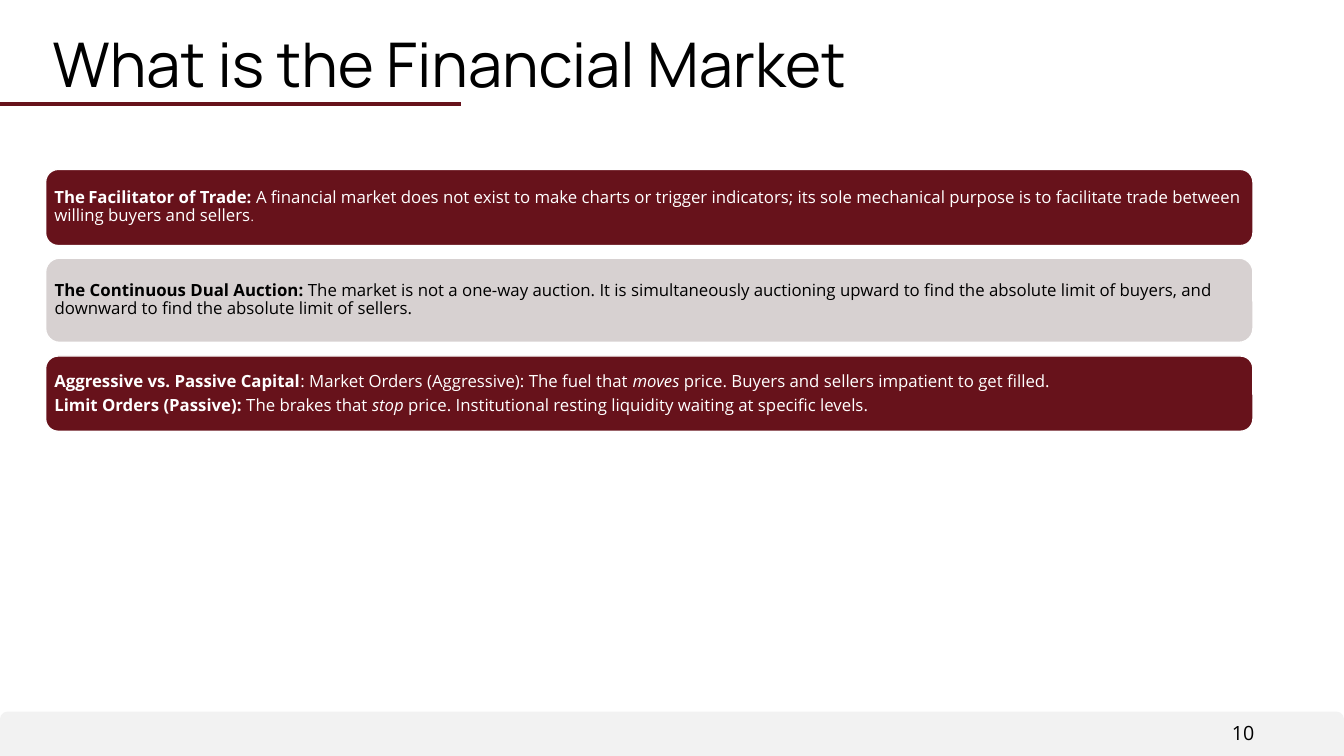
from pptx import Presentation
from pptx.dml.color import RGBColor
from pptx.enum.shapes import MSO_CONNECTOR, MSO_SHAPE
from pptx.enum.text import MSO_ANCHOR, PP_ALIGN
from pptx.oxml.ns import qn
from pptx.util import Pt
from lxml.etree import SubElement

MAROON, GREY, WHITE, BLACK = "67121B", "D7D1D1", "FFFFFF", "000000"
FOOTER_GREY = "F2F2F2"
BODY_FONT, TITLE_FONT = "Open Sans", "Manrope"

# Each card: top, height, fill, text colour, paragraphs of (text, style, size) runs
CARDS = [
    (121, 54.4, MAROON, WHITE, [[
        ("The", "bold", 12), (" ", "bold", 9), ("Facilitator of Trade:", "bold", 12),
        (" A financial market does not exist to make charts or trigger indicators; "
         "its sole mechanical purpose is to facilitate trade between willing buyers "
         "and sellers", "plain", 12),
        (".", "plain", 9)]]),
    (184.4, 60.2, GREY, BLACK, [[
        ("The Continuous Dual Auction:", "bold", 12),
        (" The market is not a one-way auction. It is simultaneously auctioning upward "
         "to find the absolute limit of buyers, and downward to find the absolute limit "
         "of sellers.", "plain", 12)]]),
    (254.3, 53.8, MAROON, WHITE, [
        [("Aggressive vs. Passive Capital", "bold", 12),
         (": Market Orders (Aggressive): The fuel that ", "plain", 12),
         ("moves", "italic", 12),
         (" price. Buyers and sellers impatient to get filled.", "plain", 12)],
        [("Limit Orders (Passive):", "bold", 12), (" The brakes that ", "plain", 12),
         ("stop", "italic", 12),
         (" price. Institutional resting liquidity waiting at specific levels.",
          "plain", 12)]]),
]


def color(hex_string):
    return RGBColor.from_string(hex_string)


def set_font(font, name, size, hex_string):
    font.name, font.size = name, Pt(size)
    font.color.rgb = color(hex_string)


def set_margins(frame, horizontal, vertical):
    frame.margin_left = frame.margin_right = Pt(horizontal)
    frame.margin_top = frame.margin_bottom = Pt(vertical)


def add_filled_shape(slide, kind, box, fill):
    shape = slide.shapes.add_shape(kind, *map(Pt, box))
    shape.shadow.inherit = False
    shape.fill.solid()
    shape.fill.fore_color.rgb = color(fill)
    shape.line.fill.background()
    return shape


def add_text(slide, box, text, font, size, anchor, alignment):
    frame = slide.shapes.add_textbox(*map(Pt, box)).text_frame
    frame.word_wrap = True
    frame.vertical_anchor = anchor
    set_margins(frame, 5, 3)
    paragraph = frame.paragraphs[0]
    paragraph.text = text
    paragraph.alignment = alignment
    set_font(paragraph.runs[0].font, font, size, BLACK)
    return paragraph


def add_footer(slide, left, top, width, height):
    add_filled_shape(slide, MSO_SHAPE.ROUND_2_SAME_RECTANGLE,
                     (left, top, width, height), FOOTER_GREY)
    add_text(slide, (left + 779, top + 3.6, 122, 24.5), "10", BODY_FONT, 14,
             MSO_ANCHOR.TOP, PP_ALIGN.RIGHT)


def add_header(slide, left, top, width, height):
    # Rule from the slide edge, level with the bottom of the title
    rule_top = top + height - 0.7
    rule = slide.shapes.add_connector(MSO_CONNECTOR.STRAIGHT, Pt(0), Pt(rule_top),
                                      Pt(329), Pt(rule_top))
    rule.line.color.rgb = color(MAROON)
    rule.line.width = Pt(3)
    SubElement(rule._element.spPr, qn("a:effectLst"))
    title = add_text(slide, (left, top, width, height), "What is the Financial Market",
                     TITLE_FONT, 44, MSO_ANCHOR.BOTTOM, PP_ALIGN.LEFT)
    title.line_spacing = 0.9


def add_card(slide, left, top, width, height, fill, text_color, paragraphs):
    card = add_filled_shape(slide, MSO_SHAPE.ROUNDED_RECTANGLE,
                            (left, top, width, height), fill)
    card.line.color.rgb = color(WHITE)
    card.line.width = Pt(1)
    frame = card.text_frame
    frame.word_wrap = True
    frame.vertical_anchor = MSO_ANCHOR.MIDDLE
    set_margins(frame, 3.6, 3.6)
    for index, runs in enumerate(paragraphs):
        paragraph = frame.add_paragraph() if index else frame.paragraphs[0]
        paragraph.alignment = PP_ALIGN.LEFT
        paragraph.line_spacing = 0.9
        paragraph.space_after = Pt(4.2)
        for text, style, size in runs:
            run = paragraph.add_run()
            run.text = text
            set_font(run.font, BODY_FONT, size, text_color)
            run.font.bold = style == "bold"
            run.font.italic = style == "italic"


def main():
    presentation = Presentation()
    presentation.slide_width, presentation.slide_height = Pt(960), Pt(540)
    slide = presentation.slides.add_slide(presentation.slide_layouts[6])
    add_footer(slide, 0, 508.3, 960, 31.7)
    add_header(slide, 32.4, 14.4, 894, 60.5)
    for top, height, fill, text_color, paragraphs in CARDS:
        add_card(slide, 32.6, top, 862.4, height, fill, text_color, paragraphs)
    presentation.save("out.pptx")


if __name__ == "__main__":
    main()
